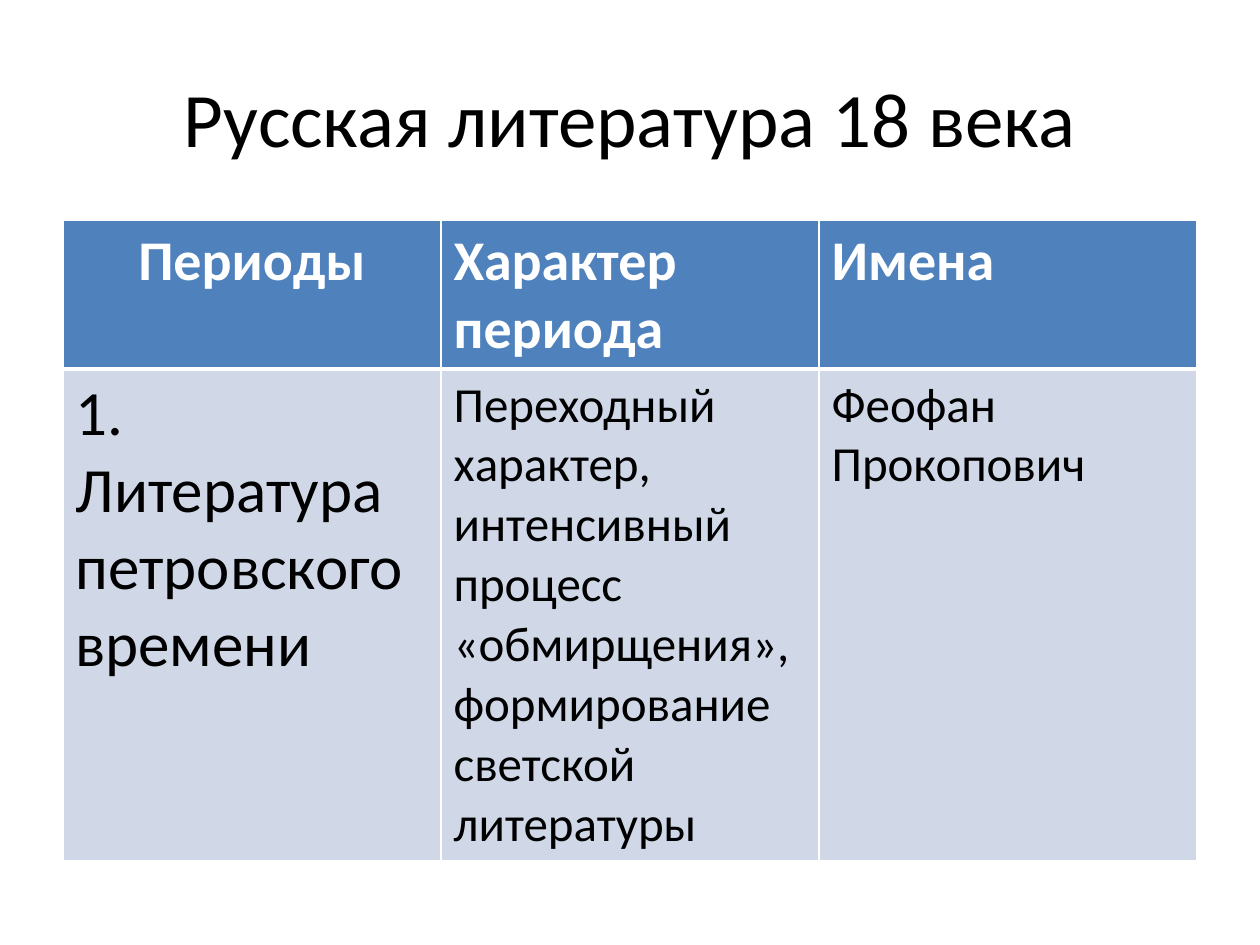
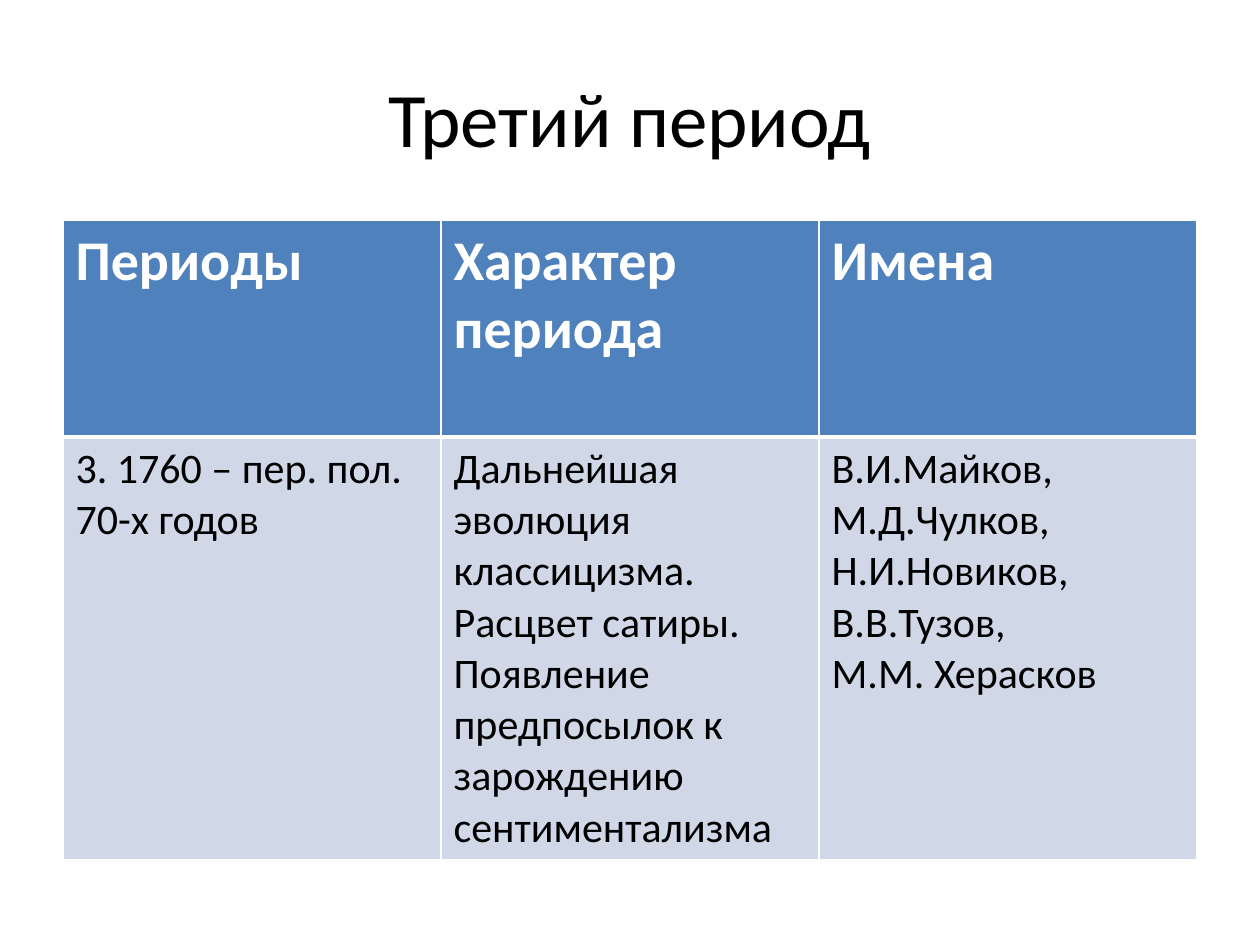
from dataclasses import dataclass

from lxml import etree
from pptx import Presentation
from pptx.dml.color import RGBColor
from pptx.enum.text import MSO_ANCHOR, PP_ALIGN
from pptx.oxml.ns import qn
from pptx.util import Emu, Pt

LEFT, CENTER = PP_ALIGN.LEFT, PP_ALIGN.CENTER
MIDDLE = MSO_ANCHOR.MIDDLE

EMU_PER_PX = 9144  # 100 px to the inch
SLIDE_WIDTH, SLIDE_HEIGHT = 1000, 750
MARGIN = 50
CONTENT_WIDTH = SLIDE_WIDTH - 2 * MARGIN
TITLE_TOP, TITLE_HEIGHT = 30, 125
TABLE_TOP = 175
BLANK_LAYOUT = 6

FONT = "Calibri"
BLACK, WHITE = "000000", "FFFFFF"
HEADER_FILL, BODY_FILL = "4F81BD", "D0D8E8"
TITLE_SIZE, HEADER_SIZE = 44, 32
THIN, THICK = 1, 3
HEADINGS = ("Периоды", "Характер периода", "Имена")


@dataclass(frozen=True)
class CellStyle:
    fill: str
    color: str
    bold: bool
    top: int
    bottom: int


HEADER_STYLE = CellStyle(HEADER_FILL, WHITE, True, THIN, THICK)
BODY_STYLE = CellStyle(BODY_FILL, BLACK, False, THICK, THIN)


@dataclass(frozen=True)
class Entry:
    text: str
    size: int
    align: PP_ALIGN = LEFT


@dataclass(frozen=True)
class PeriodPage:
    title: str
    first_heading_align: PP_ALIGN
    row_heights: tuple[int, int]
    entries: tuple[Entry, ...]


PAGES = (
    PeriodPage(
        "Русская литература 18 века", CENTER, (118, 390),
        (
            Entry("1. Литература петровского времени", 36),
            Entry("Переходный характер, интенсивный процесс «обмирщения», "
                  "формирование светской литературы", 28),
            Entry("Феофан Прокопович", 28),
        ),
    ),
    PeriodPage(
        "Третий период", LEFT, (172, 335),
        (
            Entry("3. 1760 – пер. пол. 70-х годов", 24),
            Entry("Дальнейшая эволюция классицизма. Расцвет сатиры. Появление "
                  "предпосылок к зарождению сентиментализма", 24),
            Entry("В.И.Майков, М.Д.Чулков, Н.И.Новиков, В.В.Тузов,\n"
                  "М.М. Херасков", 24),
        ),
    ),
)


def px(length: int) -> Emu:
    return Emu(length * EMU_PER_PX)


def rgb(value: str) -> RGBColor:
    return RGBColor.from_string(value)


def write_text(frame, entry: Entry, color: str, bold: bool = False) -> None:
    frame.word_wrap = True
    frame.text = entry.text
    for para in frame.paragraphs:
        para.alignment = entry.align
        para.font.name = FONT
        para.font.size = Pt(entry.size)
        para.font.bold = bold
        para.font.color.rgb = rgb(color)


def set_borders(cell, style: CellStyle) -> None:
    """Give the cell white edges; they must precede its fill in the XML."""
    properties = cell._tc.get_or_add_tcPr()
    widths = {"L": THIN, "R": THIN, "T": style.top, "B": style.bottom}
    for index, (side, width) in enumerate(widths.items()):
        line = etree.Element(qn(f"a:ln{side}"), w=str(Pt(width)))
        fill = etree.SubElement(line, qn("a:solidFill"))
        etree.SubElement(fill, qn("a:srgbClr"), val=WHITE)
        properties.insert(index, line)


def add_title(page, title: str) -> None:
    box = page.shapes.add_textbox(
        px(MARGIN), px(TITLE_TOP), px(CONTENT_WIDTH), px(TITLE_HEIGHT))
    write_text(box.text_frame, Entry(title, TITLE_SIZE, CENTER), BLACK)
    box.text_frame.vertical_anchor = MIDDLE


def add_period_table(page, period: PeriodPage) -> None:
    headings = [
        Entry(heading, HEADER_SIZE, LEFT if column else period.first_heading_align)
        for column, heading in enumerate(HEADINGS)
    ]
    rows = ((headings, HEADER_STYLE), (period.entries, BODY_STYLE))
    table = page.shapes.add_table(
        len(rows), len(HEADINGS), px(MARGIN), px(TABLE_TOP),
        px(CONTENT_WIDTH), px(sum(period.row_heights))).table
    table.horz_banding = False
    for row, (entries, style) in enumerate(rows):
        table.rows[row].height = px(period.row_heights[row])
        for column, entry in enumerate(entries):
            cell = table.cell(row, column)
            cell.fill.solid()
            cell.fill.fore_color.rgb = rgb(style.fill)
            set_borders(cell, style)
            write_text(cell.text_frame, entry, style.color, style.bold)


def main() -> None:
    deck = Presentation()
    deck.slide_width, deck.slide_height = px(SLIDE_WIDTH), px(SLIDE_HEIGHT)
    for period in PAGES:
        page = deck.slides.add_slide(deck.slide_layouts[BLANK_LAYOUT])
        add_title(page, period.title)
        add_period_table(page, period)
    deck.save("out.pptx")


if __name__ == "__main__":
    main()
